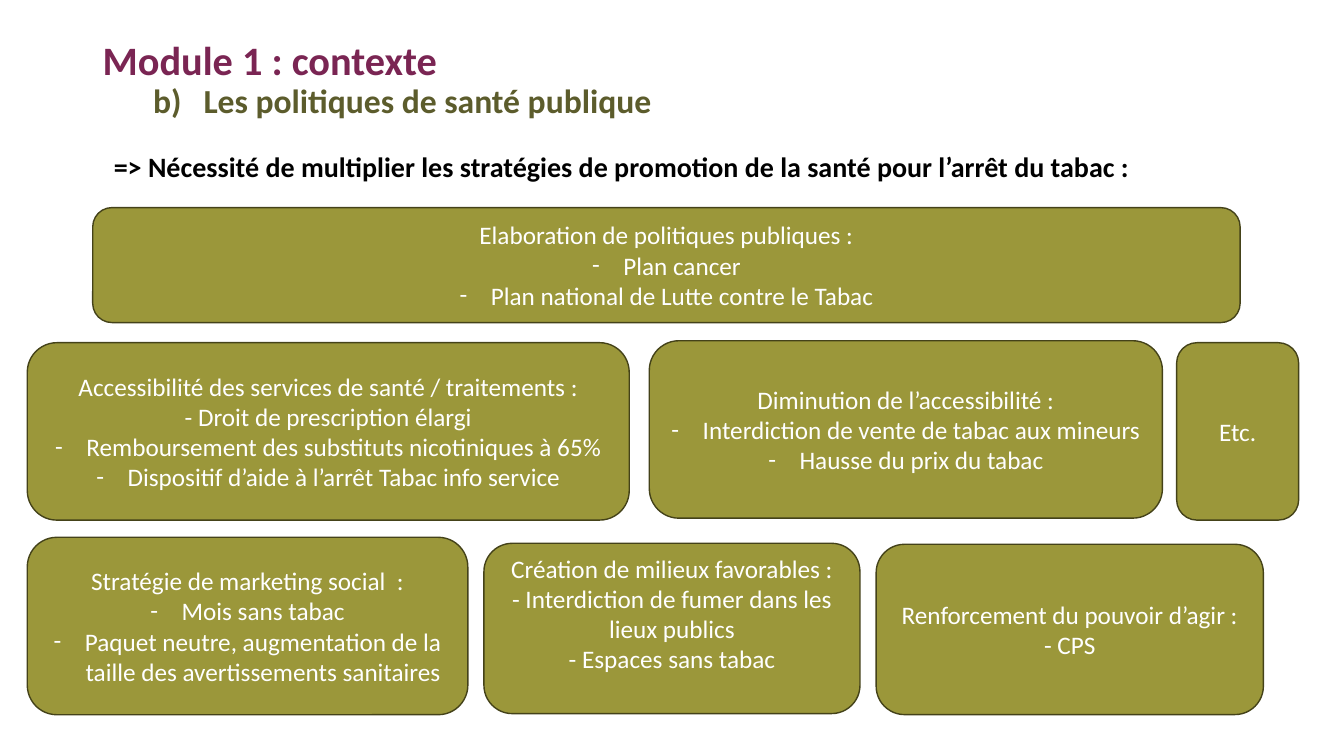
from lxml import etree
from pptx import Presentation
from pptx import util as u
from pptx.dml.color import RGBColor
from pptx.enum import shapes, text
from pptx.oxml.ns import qn

OLIVE = RGBColor(0x9B, 0x97, 0x3A)
DARK_OLIVE = RGBColor(0x44, 0x42, 0x19)
MOSS = RGBColor(0x5C, 0x5C, 0x2C)
PLUM = RGBColor(0x7A, 0x25, 0x53)
BLACK = RGBColor(0, 0, 0)
WHITE = RGBColor(0xFF, 0xFF, 0xFF)

DASH = "– "  # marks a line that takes a hanging dash bullet

# left, top, width, height in percent of the slide; lines; bottom inset in inches
STRATEGIES = [
    ((6.9, 27.47, 85.37, 15.2),
     ["Elaboration de politiques publiques :",
      DASH + "Plan cancer",
      DASH + "Plan national de Lutte contre le Tabac"], 0.05),
    ((48.31, 45.07, 38.18, 23.47),
     ["Diminution de l’accessibilité :",
      DASH + "Interdiction de vente de tabac aux mineurs",
      DASH + "Hausse du prix du tabac"], 0.05),
    ((2.03, 71.07, 32.78, 23.47),
     ["Stratégie de marketing social  :",
      DASH + "Mois sans tabac",
      DASH + "Paquet neutre, augmentation de la taille des avertissements sanitaires"], 0.05),
    ((2.03, 45.33, 44.79, 23.47),
     ["Accessibilité des services de santé / traitements :",
      "- Droit de prescription élargi",
      DASH + "Remboursement des substituts nicotiniques à 65%",
      DASH + "Dispositif d’aide à l’arrêt Tabac info service"], 0.05),
    ((36.01, 71.87, 27.98, 22.53),
     ["Création de milieux favorables :",
      "- Interdiction de fumer dans les lieux publics",
      "- Espaces sans tabac"], 0.35),
    ((65.19, 72, 28.81, 22.53),
     ["Renforcement du pouvoir d’agir :", "- CPS"], 0.05),
    ((87.55, 45.33, 9.08, 23.47), ["Etc."], 0.05),
]


class Deck:
    font = "Calibri"

    def __init__(self):
        self.prs = Presentation()
        self.prs.slide_width = u.Inches(13.33)
        self.prs.slide_height = u.Inches(7.5)
        self.slide = self.prs.slides.add_slide(self.prs.slide_layouts[6])

    def area(self, left, top, width, height):
        """Turn percentages of the slide into lengths."""
        across, down = self.prs.slide_width / 100, self.prs.slide_height / 100
        return [u.Emu(round(length)) for length in
                (left * across, top * down, width * across, height * down)]

    def add_words(self, paragraph, words, size, color, bold=False):
        run = paragraph.add_run()
        run.text = words
        run.font.name = self.font
        run.font.size = u.Pt(size)
        run.font.bold = bold
        run.font.color.rgb = color

    def bullet(self, paragraph, tag, indent, hanging, **attributes):
        props = paragraph._p.get_or_add_pPr()
        props.set("marL", str(u.Inches(indent)))
        props.set("indent", str(-u.Inches(hanging)))
        etree.SubElement(props, qn("a:buFont"), typeface=self.font)
        etree.SubElement(props, qn("a:" + tag), **attributes)

    def heading(self, place, words, size, color, spacing=1.0):
        """Add a bold line of text and return its text frame."""
        frame = self.slide.shapes.add_textbox(*self.area(*place)).text_frame
        frame.word_wrap = True
        line = frame.paragraphs[0]
        line.line_spacing = spacing
        self.add_words(line, words, size, color, bold=True)
        return frame

    def strategy(self, place, lines, bottom):
        box = self.slide.shapes.add_shape(
            shapes.MSO_SHAPE.ROUNDED_RECTANGLE, *self.area(*place))
        box.shadow.inherit = False
        box.fill.solid()
        box.fill.fore_color.rgb = OLIVE
        box.line.color.rgb = DARK_OLIVE
        box.line.width = u.Pt(1)
        frame = box.text_frame
        frame.word_wrap = True
        frame.vertical_anchor = text.MSO_ANCHOR.MIDDLE
        frame.margin_bottom = u.Inches(bottom)
        for number, words in enumerate(lines):
            line = frame.add_paragraph() if number else frame.paragraphs[0]
            line.alignment = text.PP_ALIGN.CENTER
            if words.startswith(DASH):
                self.bullet(line, "buChar", 0.31, 0.31, char="-")
            self.add_words(line, words.removeprefix(DASH), 18, WHITE)


def main():
    deck = Deck()
    topic = deck.heading((7.73, 10.53, 86.27, 9.47),
                         "Les politiques de santé publique", 24, MOSS, 0.9)
    deck.bullet(topic.paragraphs[0], "buAutoNum", 0.89, 0.5,
                type="alphaLcParenR", startAt="2")
    module = deck.heading((6.9, 5.33, 86.27, 6.53),
                          "Module 1 : contexte", 28.8, PLUM, 0.7)
    module.vertical_anchor = text.MSO_ANCHOR.MIDDLE
    need = deck.heading(
        (7.73, 19.07, 86.72, 5.87),
        "=> Nécessité de multiplier les stratégies de promotion de la santé "
        "pour l’arrêt du tabac :", 20, BLACK)
    need.auto_size = text.MSO_AUTO_SIZE.SHAPE_TO_FIT_TEXT
    for place, lines, bottom in STRATEGIES:
        deck.strategy(place, lines, bottom)
    deck.prs.save("out.pptx")


if __name__ == "__main__":
    main()
